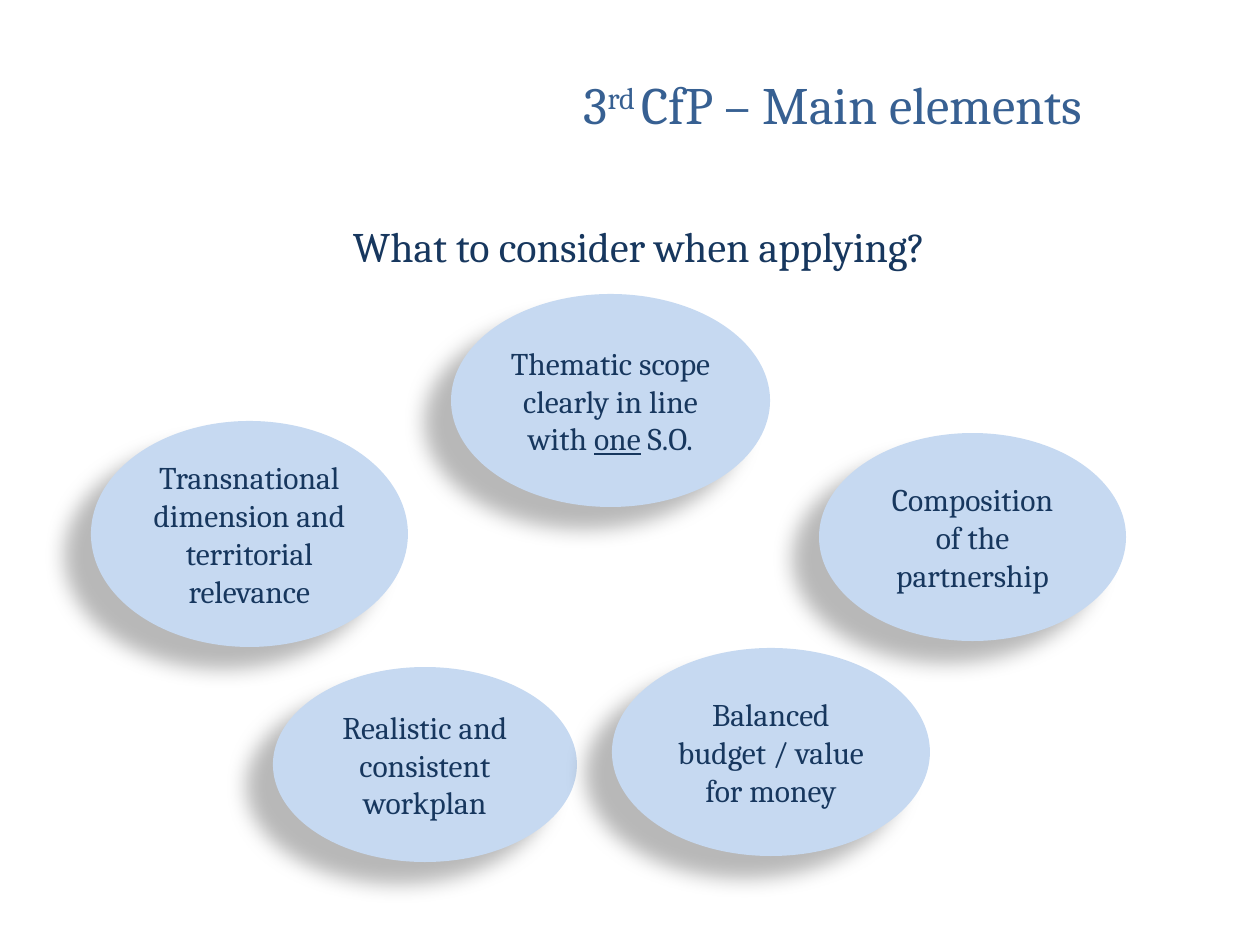
import pptx
import pptx.dml.color
import pptx.enum.shapes
import pptx.enum.text
import pptx.oxml
import pptx.oxml.ns
import pptx.util

# Content: runs are (text, style), boxes are left, top, width, height in px
TITLE = [("3", ""), ("rd ", "super"), ("CfP – Main elements", "")]
TITLE_BOX = (471, 66, 724, 100)
SUBTITLE = [("What to consider when applying?", "")]
SUBTITLE_BOX = (64, 214, 1150, 655)
CRITERIA = [
    ((91, 421, 317, 226), [("Transnational dimension and territorial relevance", "")]),
    ((451, 294, 319, 213), [("Thematic scope clearly in line with ", ""),
                            ("one", "underline"), (" S.O.", "")]),
    ((273, 667, 304, 195), [("Realistic and consistent workplan", "")]),
    ((612, 648, 318, 208), [("Balanced budget / value for money", "")]),
    ((819, 433, 307, 208), [("Composition of the partnership", "")]),
]

THEME = {
    "font": "Cambria",
    "title": (30, "376092"),
    "subtitle": (24, "17375E"),
    "criterion": (18, "17375E"),
    "fill": "C6D9F1",
    "shadow": "000000",
}
EMU_PER_PX = 914400 / 126


def px(n):
    return pptx.util.Emu(round(n * EMU_PER_PX))


def rgb(value):
    return pptx.dml.color.RGBColor.from_string(value)


def place(sp, box):
    sp.left, sp.top, sp.width, sp.height = map(px, box)


def write(sp, runs, style, anchor):
    size, color = THEME[style]
    tf = sp.text_frame
    tf.word_wrap = True
    tf.auto_size = pptx.enum.text.MSO_AUTO_SIZE.NONE
    tf.vertical_anchor = anchor
    p = tf.paragraphs[0]
    p.alignment = pptx.enum.text.PP_ALIGN.CENTER
    p.font.name = THEME["font"]
    p.font.size = pptx.util.Pt(size)
    p.font.color.rgb = rgb(color)
    for text, mark in runs:
        r = p.add_run()
        r.text = text
        if mark == "underline":
            r.font.underline = True
        elif mark == "super":
            r._r.get_or_add_rPr().set("baseline", "30000")


def add_shadow(sp):
    sp.shadow.inherit = False
    effects = sp._element.spPr.find(pptx.oxml.ns.qn("a:effectLst"))
    effects.append(pptx.oxml.parse_xml(
        f'<a:outerShdw {pptx.oxml.ns.nsdecls("a")} blurRad="150000" dist="250000" '
        f'dir="{141 * 60000}" algn="tl" rotWithShape="0">'
        f'<a:srgbClr val="{THEME["shadow"]}"><a:alpha val="28000"/></a:srgbClr>'
        '</a:outerShdw>'))


def main():
    prs = pptx.Presentation()
    prs.slide_width, prs.slide_height = px(1260), px(945)
    s = prs.slides.add_slide(prs.slide_layouts[0])
    top = pptx.enum.text.MSO_ANCHOR.TOP
    middle = pptx.enum.text.MSO_ANCHOR.MIDDLE

    # Title and question
    title, subtitle = s.shapes.title, s.placeholders[1]
    place(title, TITLE_BOX)
    write(title, TITLE, "title", top)
    place(subtitle, SUBTITLE_BOX)
    write(subtitle, SUBTITLE, "subtitle", top)

    # Ring of criteria
    for box, runs in CRITERIA:
        sp = s.shapes.add_shape(pptx.enum.shapes.MSO_SHAPE.OVAL, *map(px, box))
        sp.fill.solid()
        sp.fill.fore_color.rgb = rgb(THEME["fill"])
        sp.line.fill.background()
        add_shadow(sp)
        write(sp, runs, "criterion", middle)

    prs.save("out.pptx")


if __name__ == "__main__":
    main()
